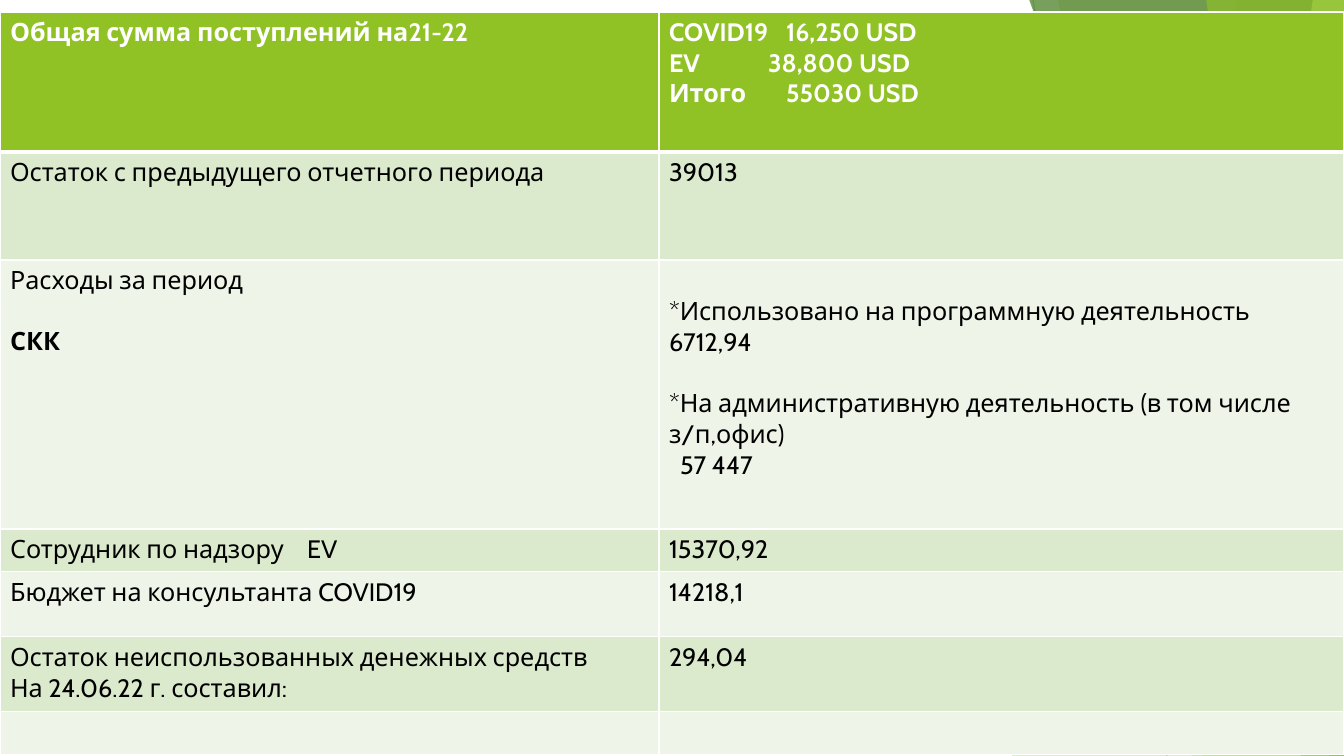
from pptx import Presentation
from pptx.dml.color import RGBColor
from pptx.enum.text import PP_ALIGN
from pptx.oxml.ns import qn
from pptx.util import Pt
from lxml.etree import SubElement

PX = 914400 / 100.8
THEME = {
    "font": "Cabin", "size": 18, "gap": 22,
    "head": "90C226", "dark": "DBE9CD", "light": "EEF4E8",
    "white": "FFFFFF", "black": "000000", "grey": "BFBFBF",
    "leaf": "3F7819", "lime": "C0E474",
}


def px(n):
    return round(n * PX)


def rgb(name):
    return RGBColor.from_string(THEME[name])


deck = Presentation()
deck.slide_width, deck.slide_height = px(1344), px(756)
slide = deck.slides.add_slide(deck.slide_layouts[6])
shapes = slide.shapes

# Thin line of the backdrop
line = shapes.add_connector(1, px(1033), 0, px(1167), px(756))
line.line.color.rgb = rgb("grey")
line.line.width = Pt(0.75)
SubElement(line._element.spPr, qn("a:effectLst"))

# Slanted facets: top left, bottom left, colour, opacity in percent
facets = [
    (1238, 1012, "head", 30),
    (1058, 1192, "head", 20),
    (1029, 1301, "leaf", 70),
    (1313, 1202, "lime", 70),
    (1206, 1329, "head", 65),
]
for top, foot, tone, alpha in facets:
    pen = shapes.build_freeform(top, -1, scale=PX)
    pen.add_line_segments([(1344, -1), (1344, 756), (foot, 756)], close=True)
    facet = pen.convert_to_shape()
    facet.shadow.inherit = False
    facet.line.fill.background()
    facet.fill.solid()
    facet.fill.fore_color.rgb = rgb(tone)
    color = facet._element.spPr.find(qn("a:solidFill"))[0]
    SubElement(color, qn("a:alpha"), val=str(alpha * 1000))

# Table rows: height, left lines, right lines
# Each line: text, then optional tab, indent, gap above, bold
rows = [
    (140, [("Общая сумма поступлений на21-22", {})],
     [("COVID19\t16,250 USD", {"tab": 117}),
      ("EV\t38,800 USD", {"tab": 99}),
      ("Итого\t55030 USD", {"tab": 117})]),
    (108, [("Остаток с предыдущего отчетного периода", {})], [("39013", {})]),
    (269, [("Расходы за период", {}), ("СКК", {"gap": True, "bold": True})],
     [("*Использовано на программную деятельность", {}),
      ("6712,94", {}),
      ("*На административную деятельность (в том числе з/п,офис)", {"gap": True}),
      ("57 447", {"indent": 11})]),
    (43, [("Сотрудник по надзору\tEV", {"tab": 297})], [("15370,92", {})]),
    (65, [("Бюджет на консультанта COVID19", {})], [("14218,1", {})]),
    (75, [("Остаток неиспользованных денежных средств", {}),
          ("На 24.06.22 г. составил:", {})], [("294,04", {})]),
    (43, [], []),
]
high = sum(row[0] for row in rows)
table = shapes.add_table(len(rows), 2, 0, px(12), px(1344), px(high)).table
table.first_row = table.horz_banding = False
for col, width in zip(table.columns, (659, 685)):
    col.width = px(width)

for i, (height, *cells) in enumerate(rows):
    table.rows[i].height = px(height)
    tone = "head" if i == 0 else "dark" if i % 2 else "light"
    for j, lines in enumerate(cells):
        cell = table.cell(i, j)

        # White borders, thick between header and body
        props = cell._tc.get_or_add_tcPr()
        for side in "LRTB":
            thick = (i, side) in ((0, "B"), (1, "T"))
            edge = SubElement(props, qn("a:ln" + side), w=str(Pt(3 if thick else 1)))
            fill = SubElement(edge, qn("a:solidFill"))
            SubElement(fill, qn("a:srgbClr"), val=THEME["white"])
        cell.fill.solid()
        cell.fill.fore_color.rgb = rgb(tone)
        if (i, j) == (2, 1):
            cell.margin_top = px(36)

        # Text lines
        frame = cell.text_frame
        frame.paragraphs[0].font.size = Pt(THEME["size"])
        for k, (text, look) in enumerate(lines):
            para = frame.add_paragraph() if k else frame.paragraphs[0]
            para.alignment = PP_ALIGN.LEFT
            if look.get("gap"):
                para.space_before = Pt(THEME["gap"])
            form = para._p.get_or_add_pPr()
            if "indent" in look:
                form.set("marL", str(px(look["indent"])))
            if "tab" in look:
                stops = SubElement(form, qn("a:tabLst"))
                SubElement(stops, qn("a:tab"), pos=str(px(look["tab"])), algn="l")
            run = para.add_run()
            run.text = text
            run.font.name = THEME["font"]
            run.font.size = Pt(THEME["size"])
            run.font.bold = i == 0 or look.get("bold", False)
            run.font.color.rgb = rgb("black" if i else "white")

deck.save("out.pptx")
